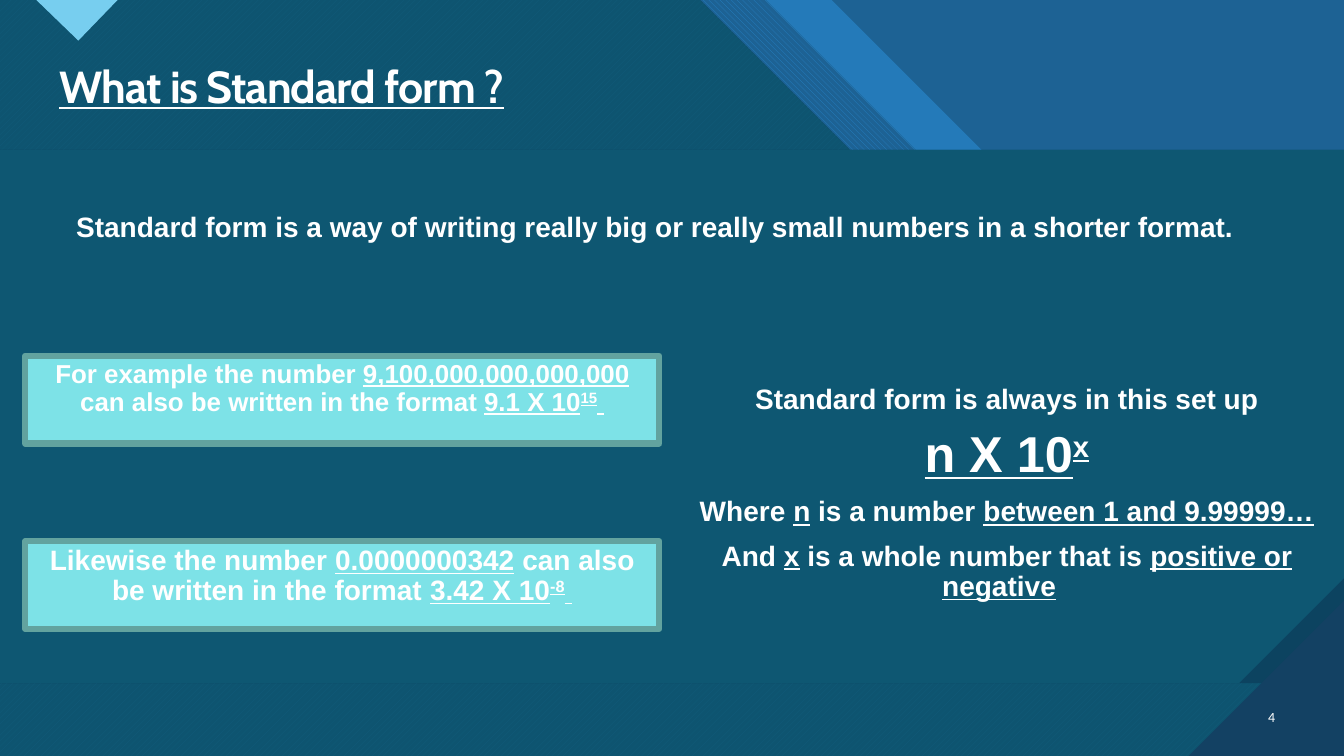
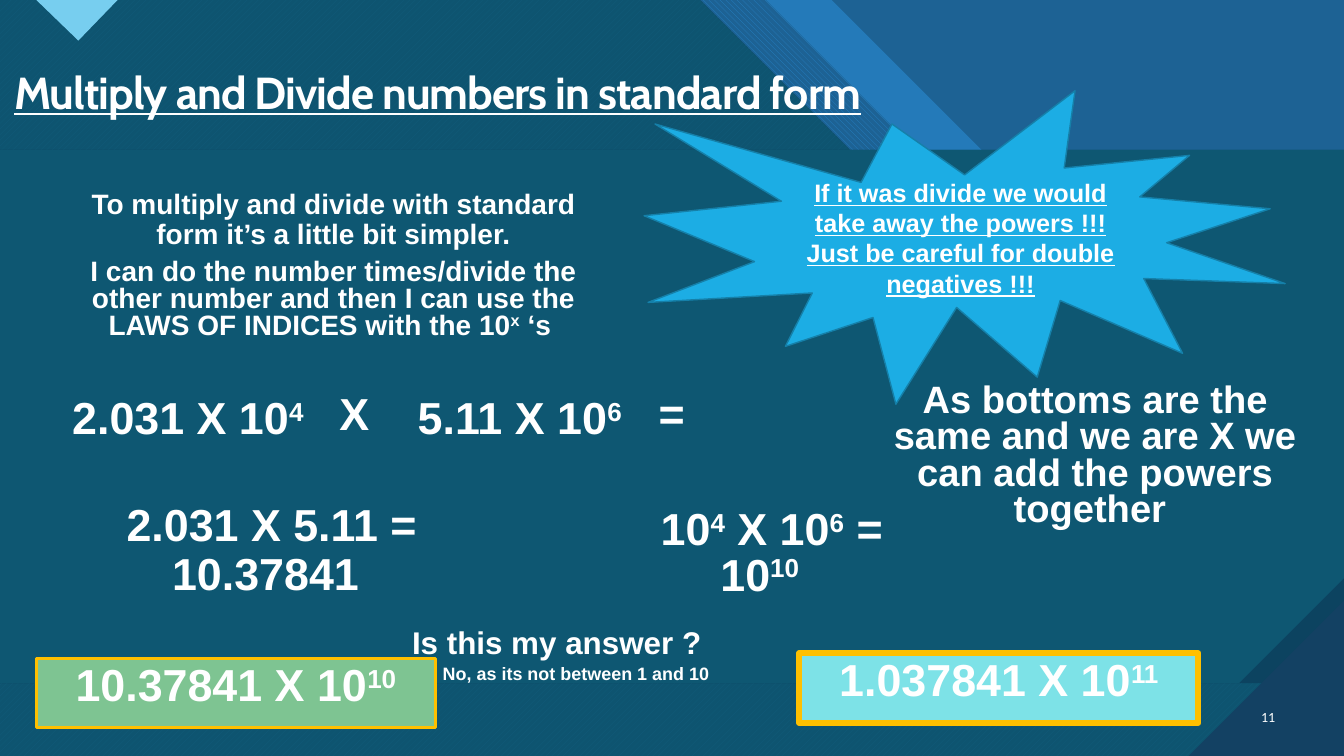
from lxml import etree
from pptx import Presentation
from pptx.dml.color import RGBColor
from pptx.enum.dml import MSO_PATTERN
from pptx.enum.shapes import MSO_SHAPE
from pptx.enum.text import MSO_ANCHOR, MSO_AUTO_SIZE, PP_ALIGN
from pptx.oxml.ns import qn
from pptx.util import Pt

RECT, SEAL = MSO_SHAPE.RECTANGLE, MSO_SHAPE.EXPLOSION1
UP, DOWN = MSO_PATTERN.WIDE_UPWARD_DIAGONAL, MSO_PATTERN.WIDE_DOWNWARD_DIAGONAL
LEFT, MID, RIGHT = PP_ALIGN.LEFT, PP_ALIGN.CENTER, PP_ALIGN.RIGHT
TOP, CENTER = MSO_ANCHOR.TOP, MSO_ANCHOR.MIDDLE
WIDE, HIGH = 960, 540

WHITE, BLUE, SKY, STRIPE = "FFFFFF", "1D6294", "2683C6", "247AB9"
TEAL, NAVY, DEEP, PALE = "0E5772", "134163", "0C4360", "77CEEF"
AQUA, SAGE, GREEN, GOLD = "7DE2E7", "62A39F", "7EC492", "FFC000"
BURST, EDGE = "1CADE4", "1580A9"


def rgb(code):
    return RGBColor.from_string(code)


def write(shape, paras, size=20, font="Arial", bold=True, line=0.9, before=10,
          align=MID, anchor=TOP):
    """Fill a shape with paragraphs; a run is text or (text, marks), u underlines, ^ raises."""
    frame = shape.text_frame
    frame.word_wrap = True
    frame.auto_size = MSO_AUTO_SIZE.NONE
    frame.vertical_anchor = anchor
    for i, runs in enumerate(paras):
        para = frame.add_paragraph() if i else frame.paragraphs[0]
        para.alignment, para.line_spacing = align, line
        para.space_before = Pt(before)
        for item in runs:
            words, marks = (item, "") if isinstance(item, str) else item
            run = para.add_run()
            run.text = words
            face = run.font
            face.name, face.bold = font, bold
            face.size = Pt(36 if "+" in marks else size)
            face.color.rgb = rgb(WHITE)
            face.underline = "u" in marks
            if "^" in marks:
                run._r.get_or_add_rPr().set("baseline", "30000")


def place(box):
    return [Pt(n) for n in box]


def label(slide, box, *paras, **style):
    write(slide.shapes.add_textbox(*place(box)), paras, **style)


def card(slide, box, runs, fill, edge, width=4.5, kind=RECT, **style):
    shape = slide.shapes.add_shape(kind, *place(box))
    shape.shadow.inherit = False
    shape.fill.solid()
    shape.fill.fore_color.rgb = rgb(fill)
    shape.line.color.rgb = rgb(edge)
    shape.line.width = Pt(width)
    write(shape, [runs], **style)


def outline(slide, points, color, back=None, hatch=None, alpha=None):
    pen = slide.shapes.build_freeform(*points[0], scale=Pt(1))
    pen.add_line_segments(points[1:], close=True)
    shape = pen.convert_to_shape()
    shape.shadow.inherit = False
    shape.line.fill.background()
    fill = shape.fill
    if hatch:
        fill.patterned()
        fill.pattern = hatch
        fill.back_color.rgb = rgb(back)
    else:
        fill.solid()
    fill.fore_color.rgb = rgb(color)
    if alpha:
        tint = shape.element.spPr.find(".//" + qn("a:srgbClr"))
        etree.SubElement(tint, qn("a:alpha"), val=str(alpha * 1000))
    return shape


def slant(edge, drop=214):
    """Area left of a diagonal that starts at edge on the top side."""
    return [(0, 0), (edge, 0), (edge + drop, drop), (WIDE, drop),
            (WIDE, HIGH), (0, HIGH)]


def panel(top, base, snip):
    return [(0, top), (WIDE, top), (WIDE, base - snip), (WIDE - snip, base), (0, base)]


def backdrop(slide):
    """Draw the shared decoration and hand it to the layout."""
    layout = slide.slide_layout
    layout.background.fill.solid()
    layout.background.fill.fore_color.rgb = rgb(BLUE)
    corner = 111
    parts = [
        outline(slide, slant(594), STRIPE),
        outline(slide, slant(547), SKY, BLUE, DOWN),
        outline(slide, slant(500), SKY, NAVY, UP),
        outline(slide, slant(500), TEAL, alpha=90),
        outline(slide, [(26.5, 0), (55.5, 29), (84.5, 0)], PALE),
        outline(slide, panel(106.8, 488.4, 0), DEEP),
        outline(slide, panel(106.8, 488.4, 75), TEAL),
        outline(slide, [(WIDE - corner, HIGH), (WIDE, HIGH), (WIDE, HIGH - corner)], NAVY),
    ]
    for i, part in enumerate(parts):
        layout.shapes.element.insert(2 + i, part.element)


def start(deck, title, left, top, number):
    slide = deck.slides.add_slide(deck.slide_layouts[5])
    if len(deck.slides) == 1:
        backdrop(slide)
    head = slide.shapes.title
    head.left, head.top, head.width, head.height = place((left, top, 882.7, 42.5))
    write(head, [[(title, "u")]], size=32, font="Cabin", before=0,
          align=LEFT, anchor=CENTER)
    for run in head.text_frame.paragraphs[0].runs:
        run._r.get_or_add_rPr().set("spc", "-70")
    label(slide, (886.3, 497.5, 31.7, 28.8), [number], size=10, font="Calibri",
          bold=False, line=1, before=0, align=RIGHT, anchor=CENTER)
    return slide


def samples(slide, x, y, w):
    """Two example cards, one above the other."""
    rows = [
        (18.5, ["For example the number ", ("9,100,000,000,000,000", "u"),
                " can also be written in the format ", ("9.1 X 10", "u"),
                ("15", "u^"), (" ", "u")]),
        (20, ["Likewise the number ", ("0.0000000342", "u"),
              " can also be written in the format ", ("3.42 X 10", "u"),
              ("-8", "u^"), (" ", "u")]),
    ]
    for i, (size, runs) in enumerate(rows):
        card(slide, (x, y + i * 132.4, w, 62.6), runs, AQUA, SAGE, size=size)


def meaning(deck):
    slide = start(deck, "What is Standard form ?", 35.3, 42.5, "4")
    label(slide, (36.7, 149, 868.3, 62.6),
          ["Standard form is a way of writing really big or really small "
           "numbers in a shorter format. "])
    samples(slide, 18, 254.2, 452.9)
    label(slide, (480.2, 271.4, 478.1, 226),
          ["Standard form is always in this set up"],
          [("n X 10", "u+"), ("x", "u^+")],
          ["Where ", ("n", "u"), " is a number ", ("between 1 and 9.99999…", "u")],
          ["And ", ("x", "u"), " is a whole number that is ",
           ("positive or negative", "u"), "  "])


def sums(slide, x, y):
    """The product and its two partial results."""
    parts = [
        (0, 3, 218, ["2.031 X 10", ("4", "^")]),
        (237, 3, 218, ["5.11 X 10", ("6", "^")]),
        (118.8, 0, 218, ["X"]),
        (345.6, 0, 218, ["="]),
        (57, 79.2, 224, ["2.031 X 5.11 = 10.37841 "]),
        (417, 82, 218, ["10", ("4", "^"), " X 10", ("6", "^"), " ="]),
        (411, 114.5, 218, ["10", ("10 ", "^")]),
    ]
    for dx, dy, w, runs in parts:
        label(slide, (x + dx, y + dy, w, 57.6), runs, size=32)


def answers(slide, x, y):
    """First result, the check on it and the final result."""
    w, h = 285.1, 49.7
    card(slide, (x, y + 21.6, w, h), ["10.37841 X 10", ("10", "^")],
         GREEN, GOLD, 2.25, size=32)
    label(slide, (x + 255.6, y, 232.6, 26.6), ["Is this my answer ?"],
          size=22.4, line=0.7)
    card(slide, (x + 545, y + 18, w, h), ["1.037841 X 10", ("11", "^")],
         AQUA, GOLD, size=32)
    label(slide, (x + 269.3, y + 25.2, 232.6, 26.6),
          ["No, as its not between 1 and 10"], size=12.8, line=0.7)


def product(deck):
    slide = start(deck, "Multiply and Divide numbers in standard form", 2.9, 46.8, "11")
    label(slide, (35.3, 132.5, 406, 64.8),
          ["To multiply and divide with standard form it’s a little bit simpler."])
    label(slide, (35.3, 182.2, 406, 64.8),
          ["I can do the number times/divide the other number and then I can use "
           "the LAWS OF INDICES with the 10", ("x", "^"), " ‘s "], line=0.8)
    sums(slide, 25.2, 276.5)
    label(slide, (614.2, 270.7, 336.2, 88.6),
          ["As bottoms are the same and we are X we can add the powers together "],
          size=27.2, line=0.8)
    answers(slide, 25.9, 448.6)
    card(slide, (460.1, 64.8, 457.9, 223.9),
         [("If it was divide we would take away the powers !!! "
           "Just be careful for double negatives !!!", "u")],
         BURST, EDGE, 1, SEAL, size=18, line=1, before=0, anchor=CENTER)


def main():
    deck = Presentation()
    deck.slide_width, deck.slide_height = Pt(WIDE), Pt(HIGH)
    meaning(deck)
    product(deck)
    deck.save("out.pptx")


if __name__ == "__main__":
    main()
